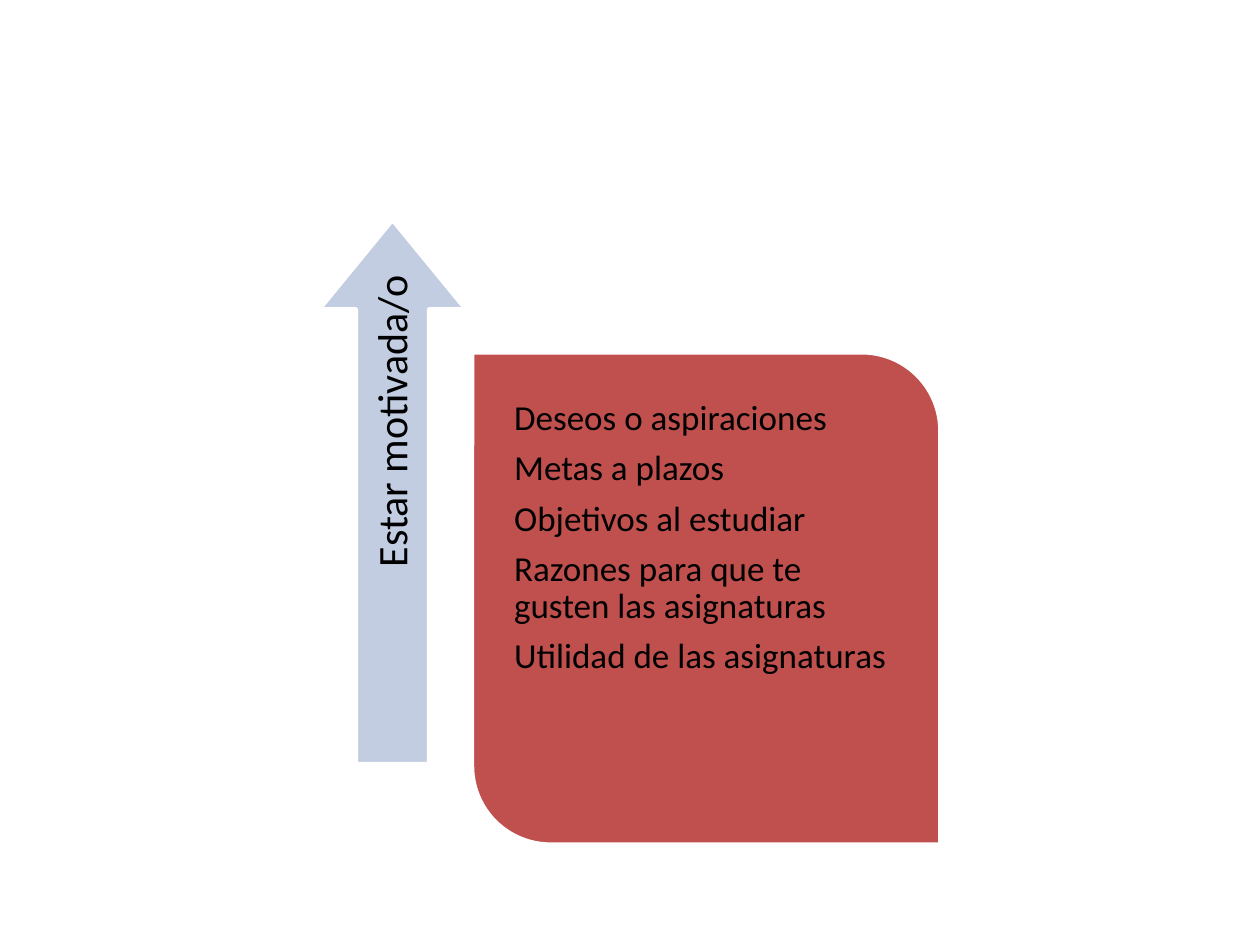
from dataclasses import dataclass

from pptx import Presentation
from pptx.dml.color import RGBColor
from pptx.enum.shapes import MSO_SHAPE
from pptx.enum.text import MSO_ANCHOR, PP_ALIGN
from pptx.slide import Slide
from pptx.util import Inches, Pt

DIAGONAL_CARD = MSO_SHAPE.ROUND_2_DIAG_RECTANGLE
ARROW = MSO_SHAPE.RIGHT_ARROW
TOP, MIDDLE = MSO_ANCHOR.TOP, MSO_ANCHOR.MIDDLE
LEFT, RIGHT = PP_ALIGN.LEFT, PP_ALIGN.RIGHT


@dataclass(frozen=True)
class Theme:
    font: str = "Calibri"
    text: RGBColor = RGBColor(0x00, 0x00, 0x00)
    outline: RGBColor = RGBColor(0xFF, 0xFF, 0xFF)
    card: RGBColor = RGBColor(0xC0, 0x50, 0x4D)
    arrow: RGBColor = RGBColor(0xC2, 0xCD, 0xE1)
    body_size: int = 20
    title_size: int = 24
    outline_width: int = 2
    line_spacing: float = 0.9
    space_after: float = 0.35


@dataclass(frozen=True)
class Frame:
    left: float
    top: float
    width: float
    height: float
    rotation: int = 0

    def lengths(self) -> tuple[Inches, ...]:
        return tuple(Inches(v) for v in (self.left, self.top, self.width, self.height))


@dataclass(frozen=True)
class Panel:
    kind: MSO_SHAPE
    frame: Frame
    fill: RGBColor
    adjustments: tuple[float, float]


@dataclass(frozen=True)
class Label:
    frame: Frame
    lines: tuple[str, ...]
    size: int
    margin: float
    anchor: MSO_ANCHOR = TOP
    align: PP_ALIGN = LEFT


THEME = Theme()

REASONS = Panel(DIAGONAL_CARD, Frame(3.75, 2.8, 3.71, 3.9), THEME.card, (0, 0.167))
REASONS_TEXT = Label(
    Frame(4, 3.1, 3.21, 3.31),
    (
        "Deseos o aspiraciones",
        "Metas a plazos",
        "Objetivos al estudiar",
        "Razones para que te gusten las asignaturas",
        "Utilidad de las asignaturas",
    ),
    THEME.body_size,
    0.08,
)
MOTIVATION = Panel(ARROW, Frame(0.96, 3.33, 4.31, 1.15, 270), THEME.arrow, (0.5, 0.61))
MOTIVATION_TEXT = Label(
    Frame(1.14, 3.79, 3.97, 0.57, 270),
    ("Estar motivada/o",),
    THEME.title_size,
    0.1,
    MIDDLE,
    RIGHT,
)


def draw_panel(page: Slide, panel: Panel) -> None:
    shape = page.shapes.add_shape(panel.kind, *panel.frame.lengths())
    shape.rotation = panel.frame.rotation
    shape.shadow.inherit = False
    for index, value in enumerate(panel.adjustments):
        shape.adjustments[index] = value
    shape.fill.solid()
    shape.fill.fore_color.rgb = panel.fill
    shape.line.color.rgb = THEME.outline
    shape.line.width = Pt(THEME.outline_width)


def draw_label(page: Slide, label: Label) -> None:
    box = page.shapes.add_textbox(*label.frame.lengths())
    box.rotation = label.frame.rotation
    frame = box.text_frame
    frame.word_wrap = True
    frame.vertical_anchor = label.anchor
    frame.margin_left = frame.margin_right = Inches(label.margin)
    frame.margin_top = frame.margin_bottom = Inches(label.margin)
    for index, line in enumerate(label.lines):
        para = frame.add_paragraph() if index else frame.paragraphs[0]
        para.alignment = label.align
        para.line_spacing = THEME.line_spacing
        para.space_after = Pt(label.size * THEME.space_after)
        span = para.add_run()
        span.text = line
        span.font.name = THEME.font
        span.font.size = Pt(label.size)
        span.font.color.rgb = THEME.text


def main() -> None:
    deck = Presentation()
    deck.slide_width, deck.slide_height = Inches(10), Inches(7.5)
    page = deck.slides.add_slide(deck.slide_layouts[6])
    for panel, label in ((REASONS, REASONS_TEXT), (MOTIVATION, MOTIVATION_TEXT)):
        draw_panel(page, panel)
        draw_label(page, label)
    deck.save("out.pptx")


if __name__ == "__main__":
    main()
